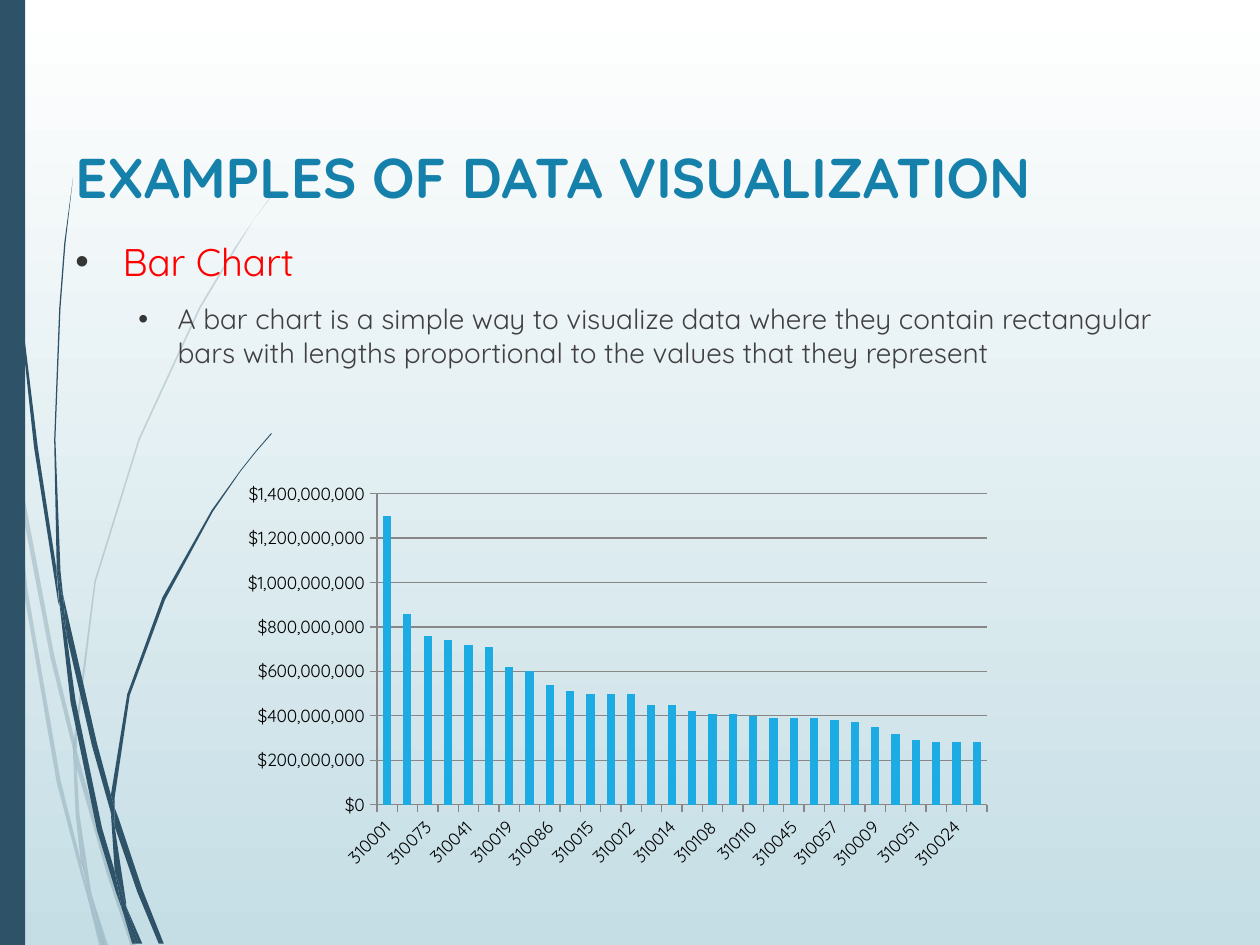
from lxml.etree import SubElement
from pptx import Presentation
from pptx.chart.data import CategoryChartData
from pptx.dml.color import RGBColor
from pptx.enum.chart import XL_CHART_TYPE, XL_TICK_MARK
from pptx.enum.shapes import MSO_SHAPE
from pptx.enum.text import MSO_ANCHOR
from pptx.oxml import parse_xml
from pptx.oxml.ns import nsdecls, qn
from pptx.util import Pt

FONT = "Quicksand"
WHITE = RGBColor(0xFF, 0xFF, 0xFF)
MIST = RGBColor(0xC5, 0xDE, 0xE5)
NAVY = RGBColor(0x2E, 0x53, 0x69)
TITLE_BLUE = RGBColor(0x15, 0x81, 0xAA)
RED = RGBColor(0xFF, 0x00, 0x00)
BODY_GRAY = RGBColor(0x40, 0x40, 0x40)
BULLET_GRAY = RGBColor(0x35, 0x35, 0x35)
BAR_BLUE = RGBColor(0x1C, 0xAC, 0xE3)
AXIS_GRAY = RGBColor(0x87, 0x87, 0x87)
BLACK = RGBColor(0x00, 0x00, 0x00)

STEM_UNIT = Pt(0.72)
PALE_STEMS = [
    [(8, 350), (6, 322), (0, 282), (0, 299), (7, 344)],
    [(40, 522), (59, 599), (59, 586), (43, 520), (10, 345), (12, 376)],
    [(64, 607), (61, 596), (61, 610), (85, 694), (104, 751), (108, 751), (88, 692)],
    [(83, 751), (86, 751), (73, 711)],
    [(64, 683), (48, 619), (22, 469), (12, 376), (8, 350), (19, 470), (45, 621),
     (64, 693), (70, 714), (69, 707)],
    [(58, 599), (60, 646), (64, 683), (67, 692), (73, 711), (72, 706), (63, 646),
     (61, 610), (61, 608)],
    [(61, 584), (76, 462), (111, 349), (159, 245), (187, 198), (201, 175), (217, 154),
     (217, 153), (201, 175), (186, 197), (158, 244), (110, 348), (75, 461), (59, 584),
     (59, 586), (61, 596)],
    [(70, 714), (79, 751), (82, 751)],
    [(61, 608), (61, 610), (61, 596), (59, 586), (58, 599)],
    [(67, 692), (65, 683), (69, 707), (70, 714), (82, 751), (83, 751), (73, 711)],
]
DARK_STEMS = [
    [(5, 110), (14, 233), (27, 355), (46, 477), (47, 481), (45, 457), (45, 453),
     (30, 355), (15, 232), (6, 109), (4, 48), (3, 0), (2, 0), (3, 48)],
    [(73, 592), (88, 645), (88, 633), (88, 631), (77, 590), (50, 472), (53, 505)],
    [(94, 649), (91, 641), (91, 656), (109, 708), (126, 749), (130, 749), (113, 706)],
    [(91, 691), (81, 657), (60, 556), (53, 505), (47, 477), (56, 557), (77, 659),
     (92, 708), (97, 722), (96, 717)],
    [(50, 472), (48, 453), (44, 349), (48, 245), (52, 193), (58, 141), (51, 193),
     (47, 245), (43, 349), (45, 449), (49, 472)],
    [(110, 749), (113, 749), (100, 719)],
    [(47, 477), (53, 505), (50, 472), (49, 472), (45, 449), (45, 453)],
    [(91, 633), (103, 552), (131, 476), (169, 406), (191, 374), (203, 359), (216, 344),
     (215, 344), (203, 358), (191, 373), (168, 405), (129, 474), (101, 551), (88, 631),
     (91, 641)],
    [(97, 722), (105, 749), (108, 749)],
    [(88, 645), (91, 691), (96, 706), (100, 719), (100, 716), (91, 656), (90, 651)],
    [(88, 645), (90, 651), (91, 656), (91, 641), (88, 631), (88, 633)],
    [(96, 706), (91, 691), (96, 717), (97, 722), (108, 749), (110, 749), (100, 719)],
]

HOSPITALS = """310001 310038 310073 310064 310041 310022 310019 310076 310086 310048
310015 310029 310012 310002 310014 310025 310108 310039 310110 310052
310045 310070 310057 310092 310009 310032 310051 310034 310024 310081""".split()
MILLIONS = [1300, 860, 760, 740, 720, 710, 620, 600, 540, 510,
            500, 500, 500, 450, 450, 420, 410, 410, 400, 390,
            390, 390, 380, 370, 350, 320, 290, 280, 280, 280]


def write(paragraph, text, size, color, bold=False, level=0, indent=None, hanging=0):
    run = paragraph.add_run()
    run.text = text
    run.font.name = FONT
    run.font.size = Pt(size)
    run.font.bold = bold
    run.font.color.rgb = color
    if indent is not None:
        paragraph.level = level
        paragraph.space_before = Pt(10)
        properties = paragraph._p.get_or_add_pPr()
        properties.set("marL", str(Pt(indent)))
        properties.set("indent", str(-Pt(hanging)))
        bullet_color = SubElement(properties, qn("a:buClr"))
        SubElement(bullet_color, qn("a:srgbClr"), val=str(BULLET_GRAY))
        SubElement(properties, qn("a:buFont"), typeface="Arial")
        SubElement(properties, qn("a:buChar"), char="•")


def paint(shape, opacity=100):
    shape.shadow.inherit = False
    shape.line.fill.background()
    shape.fill.solid()
    shape.fill.fore_color.rgb = NAVY
    if opacity < 100:
        color = shape._element.spPr.find(qn("a:solidFill"))[0]
        SubElement(color, qn("a:alpha"), val=str(opacity * 1000))


deck = Presentation()
deck.slide_width = Pt(720)
deck.slide_height = Pt(540)
slide = deck.slides.add_slide(deck.slide_layouts[6])

backdrop = slide.background.fill
backdrop.gradient()
backdrop.gradient_angle = 270
for stop, position, color in zip(backdrop.gradient_stops, (0, 1), (WHITE, MIST)):
    stop.position = position
    stop.color.rgb = color

for stems, opacity in ((PALE_STEMS, 20), (DARK_STEMS, 100)):
    for start, *rest in stems:
        outline = slide.shapes.build_freeform(*start, scale=STEM_UNIT)
        outline.add_line_segments(rest, close=True)
        paint(outline.convert_to_shape(), opacity)

side_band = slide.shapes.add_shape(MSO_SHAPE.RECTANGLE, Pt(0), Pt(0), Pt(14.4), Pt(540))
paint(side_band)

title = slide.shapes.add_textbox(Pt(36), Pt(76.3), Pt(648), Pt(49)).text_frame
title.word_wrap = True
title.vertical_anchor = MSO_ANCHOR.MIDDLE
write(title.paragraphs[0], "EXAMPLES OF DATA VISUALIZATION", size=32, color=TITLE_BLUE, bold=True)

body = slide.shapes.add_textbox(Pt(36), Pt(132.5), Pt(631.5), Pt(126.7)).text_frame
body.word_wrap = True
write(body.paragraphs[0], "Bar Chart", size=22, color=RED, indent=27, hanging=27)
write(
    body.add_paragraph(),
    "A bar chart is a simple way to visualize data where they contain rectangular "
    "bars with lengths proportional to the values that they represent",
    size=16, color=BODY_GRAY, level=1, indent=58.5, hanging=22.5,
)

charges = CategoryChartData(number_format='"$"#,##0')
charges.categories = HOSPITALS
charges.add_series("Series 1", [value * 1_000_000 for value in MILLIONS])
chart = slide.shapes.add_chart(
    XL_CHART_TYPE.COLUMN_CLUSTERED, Pt(126), Pt(265.7), Pt(447), Pt(234), charges
).chart
chart.has_legend = False
chart.has_title = False
chart.font.name = FONT
chart.font.size = Pt(10)
chart.font.color.rgb = BLACK

bars = chart.plots[0]
bars.gap_width = 150
bars.vary_by_categories = False
bars.series[0].format.fill.solid()
bars.series[0].format.fill.fore_color.rgb = BAR_BLUE

dollars = chart.value_axis
dollars.minimum_scale = 0
dollars.maximum_scale = 1_400_000_000
dollars.major_unit = 200_000_000
dollars.tick_labels.number_format = '"$"#,##0'
dollars.tick_labels.number_format_is_linked = False
for axis in (dollars, chart.category_axis):
    axis.major_tick_mark = XL_TICK_MARK.OUTSIDE
    axis.tick_labels.font.size = Pt(10)
for ruled in (dollars, chart.category_axis, dollars.major_gridlines):
    ruled.format.line.color.rgb = AXIS_GRAY
    ruled.format.line.width = Pt(0.75)
chart.category_axis._element.find(qn("c:txPr")).find(qn("a:bodyPr")).set("rot", "-2700000")

plot_area = chart.element.find(qn("c:chart")).find(qn("c:plotArea"))
for layout in plot_area.findall(qn("c:layout")):
    plot_area.remove(layout)
layout = parse_xml(f"<c:layout {nsdecls('c')}/>")
manual = SubElement(layout, qn("c:manualLayout"))
for tag, value in (("layoutTarget", "inner"), ("xMode", "edge"), ("yMode", "edge"),
                   ("x", "0.2"), ("y", "0.07"), ("w", "0.78"), ("h", "0.76")):
    SubElement(manual, qn(f"c:{tag}"), val=value)
plot_area.insert(0, layout)

deck.save("out.pptx")
